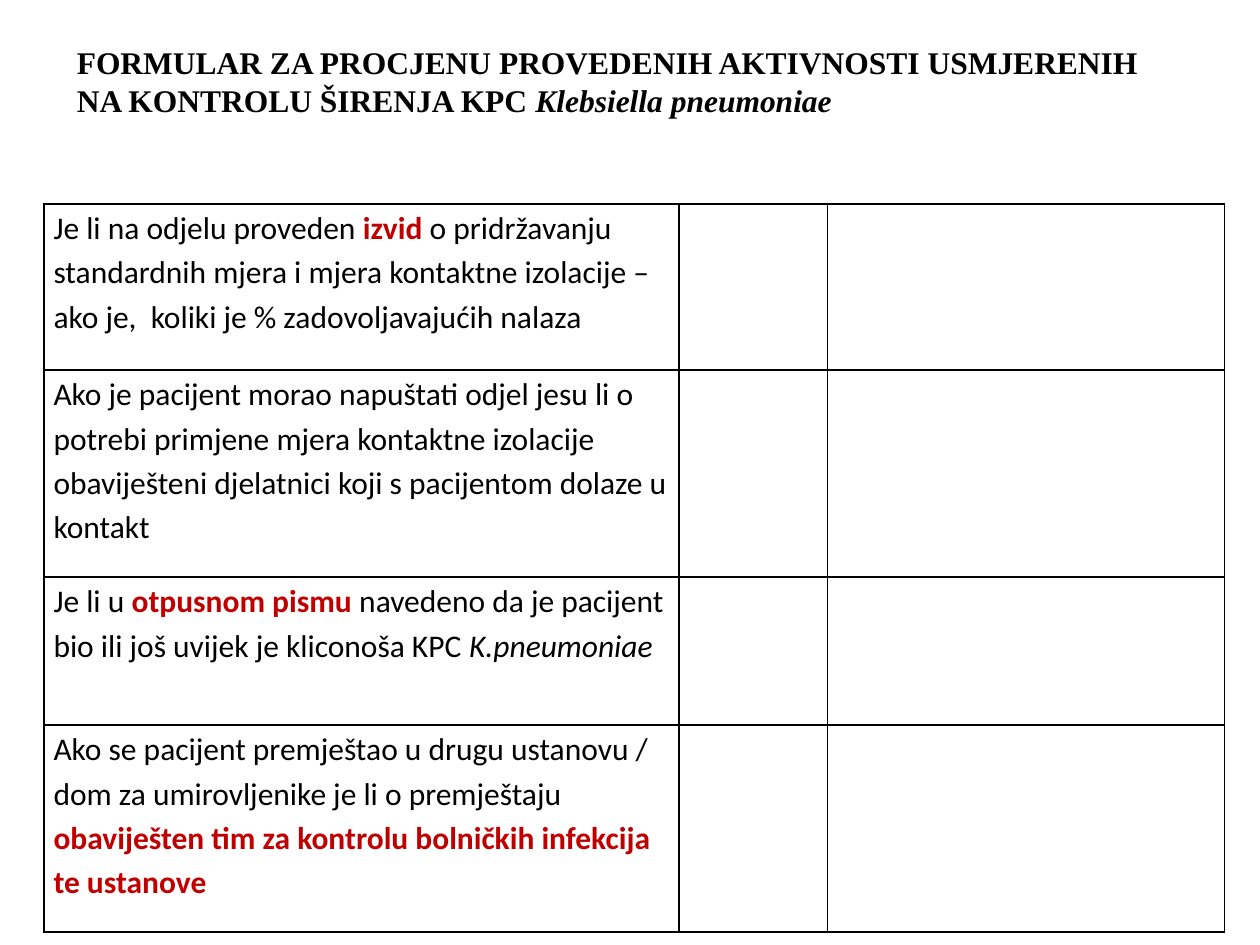
"""Build the form slide on measures against the spread of KPC Klebsiella pneumoniae."""
from dataclasses import dataclass

from lxml import etree
from pptx import Presentation
from pptx.dml.color import RGBColor
from pptx.enum.text import MSO_ANCHOR, MSO_AUTO_SIZE, PP_ALIGN
from pptx.oxml.ns import qn
from pptx.util import Pt

TOP = MSO_ANCHOR.TOP
LEFT = PP_ALIGN.LEFT
FIXED = MSO_AUTO_SIZE.NONE


@dataclass(frozen=True)
class Theme:
    ink: str = "000000"
    alert: str = "C00000"
    paper: str = "FFFFFF"
    head: str = "Times New Roman"
    body: str = "Calibri"
    size: float = 18
    rule: float = 1


@dataclass(frozen=True)
class Span:
    text: str
    bold: bool = False
    slant: bool = False
    alert: bool = False


@dataclass(frozen=True)
class Row:
    height: float
    spans: tuple[Span, ...]


THEME = Theme()
COLS = (362.8, 85, 226.8)
TITLE = (
    Span("FORMULAR ZA PROCJENU PROVEDENIH AKTIVNOSTI USMJERENIH "
         "NA KONTROLU ŠIRENJA KPC ", bold=True),
    Span("Klebsiella pneumoniae", bold=True, slant=True),
)
ROWS = (
    Row(94.9, (
        Span("Je li na odjelu proveden "),
        Span("izvid ", bold=True, alert=True),
        Span("o pridržavanju standardnih mjera i mjera kontaktne izolacije – "
             "ako je,  koliki je % zadovoljavajućih nalaza"),
    )),
    Row(118.3, (
        Span("Ako je pacijent morao napuštati odjel jesu li o potrebi primjene "
             "mjera kontaktne izolacije obaviješteni djelatnici koji s "
             "pacijentom dolaze u kontakt"),
    )),
    Row(84.6, (
        Span("Je li u "),
        Span("otpusnom pismu ", bold=True, alert=True),
        Span("navedeno da je pacijent bio ili još uvijek je kliconoša KPC "),
        Span("K.pneumoniae", slant=True),
    )),
    Row(118.3, (
        Span("Ako se pacijent premještao u drugu ustanovu / dom za "
             "umirovljenike je li o premještaju "),
        Span("obaviješten tim za kontrolu bolničkih infekcija te ustanove",
             bold=True, alert=True),
    )),
)


def apply(item, form: dict) -> None:
    """Set each attribute named in the format values."""
    for name, value in form.items():
        setattr(item, name, value)


def write(para, spans: tuple[Span, ...], face: str) -> None:
    """Add the spans to a paragraph as formatted runs."""
    for span in spans:
        run = para.add_run()
        run.text = span.text
        apply(run.font, {"name": face, "size": Pt(THEME.size),
                         "bold": span.bold, "italic": span.slant})
        run.font.color.rgb = RGBColor.from_string(
            THEME.alert if span.alert else THEME.ink)


def frame(cell) -> None:
    """Rule all four sides of a cell and clear its fill."""
    props = cell._tc.get_or_add_tcPr()
    for side in ("a:lnL", "a:lnR", "a:lnT", "a:lnB"):
        line = etree.SubElement(props, qn(side), w=str(Pt(THEME.rule)))
        fill = etree.SubElement(line, qn("a:solidFill"))
        etree.SubElement(fill, qn("a:srgbClr"), val=THEME.ink)
    cell.fill.background()


def add_title(slide) -> None:
    """Fill and place the title."""
    title = slide.shapes.title
    apply(title, {"left": Pt(36.7), "top": Pt(20.9),
                  "width": Pt(629.3), "height": Pt(63.4)})
    apply(title.text_frame, {"word_wrap": True, "auto_size": FIXED,
                             "vertical_anchor": TOP})
    para = title.text_frame.paragraphs[0]
    para.alignment = LEFT
    write(para, TITLE, THEME.head)


def add_form(slide) -> None:
    """Draw the form with questions on the left and blanks on the right."""
    table = slide.shapes.add_table(
        len(ROWS), len(COLS), Pt(25.2), Pt(116.6), Pt(sum(COLS)),
        Pt(sum(row.height for row in ROWS))).table
    apply(table, {"first_row": False, "horz_banding": False})
    for col, width in zip(table.columns, COLS):
        col.width = Pt(width)
    for line, row in zip(table.rows, ROWS):
        line.height = Pt(row.height)
        for cell in line.cells:
            apply(cell, {"margin_left": Pt(5.4), "margin_right": Pt(5.4),
                         "margin_top": 0, "margin_bottom": 0})
            frame(cell)
        para = line.cells[0].text_frame.paragraphs[0]
        apply(para, {"line_spacing": 1.15, "space_after": Pt(10)})
        write(para, row.spans, THEME.body)


def main() -> None:
    """Build and save the slide."""
    deck = Presentation()
    apply(deck, {"slide_width": Pt(720), "slide_height": Pt(540)})
    slide = deck.slides.add_slide(deck.slide_layouts[5])
    back = slide.background.fill
    back.solid()
    back.fore_color.rgb = RGBColor.from_string(THEME.paper)
    add_title(slide)
    add_form(slide)
    deck.save("out.pptx")


if __name__ == "__main__":
    main()
